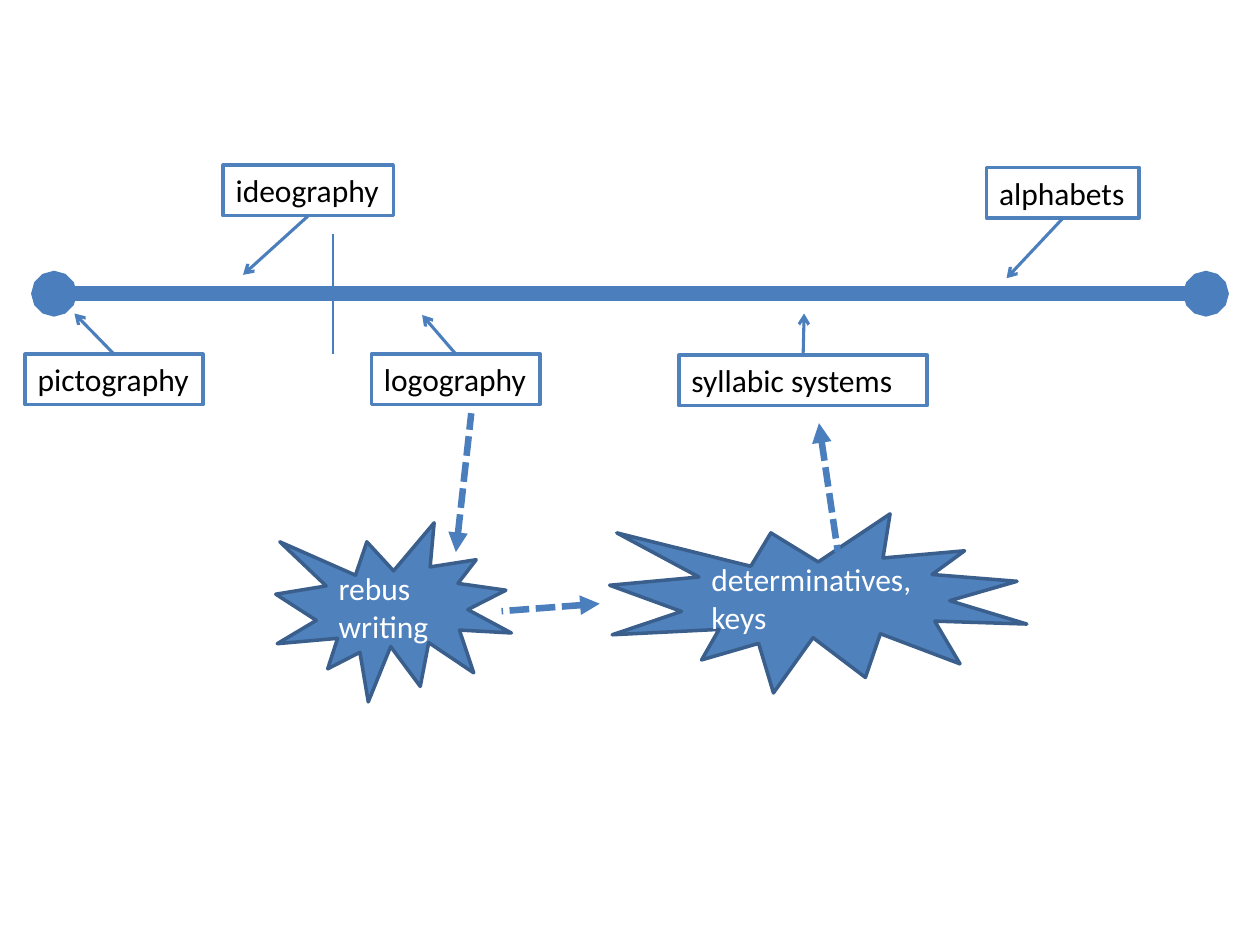
from lxml import etree
from pptx import Presentation
from pptx.dml.color import RGBColor
from pptx.enum.dml import MSO_LINE
from pptx.enum.shapes import MSO_CONNECTOR, MSO_SHAPE
from pptx.enum.text import MSO_ANCHOR, MSO_AUTO_SIZE, PP_ALIGN
from pptx.oxml.ns import qn
from pptx.util import Cm, Pt

STRAIGHT = MSO_CONNECTOR.STRAIGHT
RECTANGLE = MSO_SHAPE.RECTANGLE
BURST = MSO_SHAPE.EXPLOSION1
DASH = MSO_LINE.SQUARE_DOT
LEFT = PP_ALIGN.LEFT
TOP, MIDDLE = MSO_ANCHOR.TOP, MSO_ANCHOR.MIDDLE
GROW = MSO_AUTO_SIZE.SHAPE_TO_FIT_TEXT

WHITE = RGBColor(0xFF, 0xFF, 0xFF)
BLACK = RGBColor(0x00, 0x00, 0x00)
BLUE = RGBColor(0x4F, 0x81, 0xBD)
LINE_BLUE = RGBColor(0x4B, 0x7E, 0xBC)
DARK_BLUE = RGBColor(0x3A, 0x5F, 0x8C)

LABEL_HEIGHT = 1.02
BURST_HEIGHT = 3.61
SITE_TOP, SITE_BOTTOM = 0, 2

# Stages of writing: text, left, top, width, arrow tip (cm within the timeline)
STAGES = [
    ("pictography", 0, 3.81, 3.58, (0.99, 2.99)),
    ("ideography", 3.99, 0, 3.43, (4.39, 2.21)),
    ("logography", 6.98, 3.81, 3.4, (8, 3.02)),
    ("syllabic systems", 13.18, 3.83, 5, (15.7, 2.99)),
    ("alphabets", 19.38, 0.05, 3.07, (19.78, 2.28)),
]
# Devices between stages: text, left, top, width (cm within the transitions)
DEVICES = [
    ("rebus writing", 0, 2.21, 4.75),
    ("determinatives, keys", 6.73, 2.03, 8.41),
]
# Dashed arrows: tip, start
STEPS = [
    ((3.63, 2.8), (3.94, 0)),
    ((6.53, 3.84), (4.55, 3.99)),
    ((10.95, 0.2), (11.33, 2.8)),
]


def write_text(shape, text, color=BLACK, size=18, anchor=TOP, wrap=True):
    frame = shape.text_frame
    frame.word_wrap = wrap
    frame.vertical_anchor = anchor
    paragraph = frame.paragraphs[0]
    paragraph.alignment = LEFT
    run = paragraph.add_run()
    run.text = text
    run.font.name = "Calibri"
    run.font.size = Pt(size)
    run.font.color.rgb = color


def add_box(slide, kind, left, top, width, height, fill, line):
    shape = slide.shapes.add_shape(kind, Cm(left), Cm(top), Cm(width), Cm(height))
    shape.shadow.inherit = False
    shape.fill.solid()
    shape.fill.fore_color.rgb = fill
    shape.line.color.rgb = line
    shape.line.width = Pt(2)
    return shape


def add_line(slide, start, end, width, head=None, tail=None, dash=None):
    points = [Cm(value) for value in (*start, *end)]
    connector = slide.shapes.add_connector(STRAIGHT, *points)
    connector.line.color.rgb = LINE_BLUE
    connector.line.width = Pt(width)
    if dash:
        connector.line.dash_style = dash
    outline = connector.line._get_or_add_ln()
    for tag, arrowhead in (("a:headEnd", head), ("a:tailEnd", tail)):
        if arrowhead:
            etree.SubElement(outline, qn(tag), type=arrowhead)
    etree.SubElement(connector._element.spPr, qn("a:effectLst"))
    return connector


def add_timeline(slide, left, top, width):
    # Axis with round ends, and the divider across it
    axis_top = top + 2.59
    add_line(slide, (left + 0.58, axis_top), (left + width - 0.58, axis_top),
             8.75, head="oval", tail="oval")
    add_line(slide, (left + 6.2, top + 1.39), (left + 6.2, top + 3.81), 1.25)

    # Labels, each pointing at the axis from its near side
    for text, x, y, label_width, (tip_x, tip_y) in STAGES:
        label = add_box(slide, RECTANGLE, left + x, top + y, label_width,
                        LABEL_HEIGHT, WHITE, BLUE)
        write_text(label, text, wrap=text == "syllabic systems")
        label.text_frame.auto_size = GROW
        tip = (left + tip_x, top + tip_y)
        pointer = add_line(slide, tip, tip, 1.75, tail="arrow")
        pointer.begin_connect(label, SITE_TOP if y > tip_y else SITE_BOTTOM)


def add_transitions(slide, left, top):
    # Bursts
    for text, x, y, width in DEVICES:
        burst = add_box(slide, BURST, left + x, top + y, width,
                        BURST_HEIGHT, BLUE, DARK_BLUE)
        write_text(burst, text, color=WHITE, anchor=MIDDLE)

    # Dashed arrows
    for (tip_x, tip_y), (start_x, start_y) in STEPS:
        add_line(slide, (left + tip_x, top + tip_y),
                 (left + start_x, top + start_y), 3.75,
                 head="triangle", dash=DASH)


def main():
    presentation = Presentation()
    presentation.slide_width = Cm(25.4)
    presentation.slide_height = Cm(19.05)
    slide = presentation.slides.add_slide(presentation.slide_layouts[6])
    add_timeline(slide, left=0.51, top=3.33, width=24.38)
    add_transitions(slide, left=5.56, top=8.33)
    presentation.save("out.pptx")


if __name__ == "__main__":
    main()
